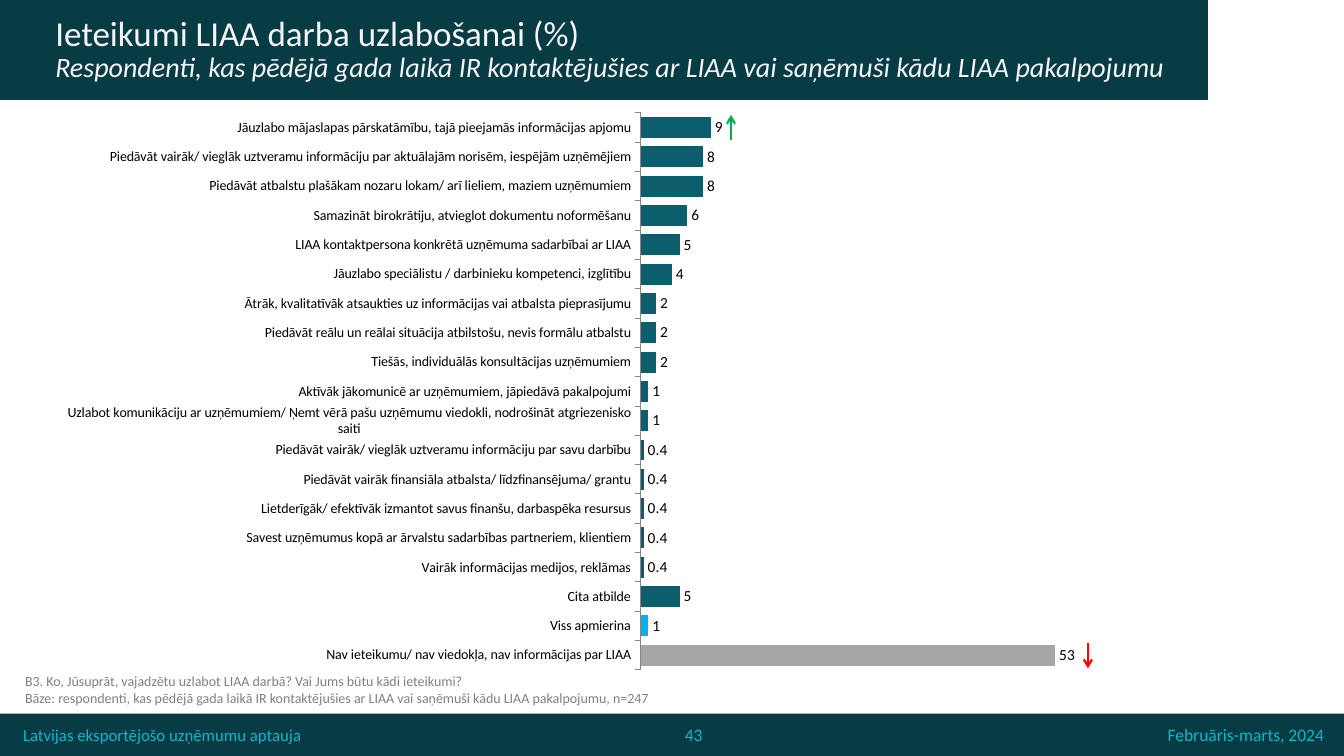
from lxml import etree
from pptx import Presentation
from pptx.chart.data import CategoryChartData
from pptx.dml.color import RGBColor
from pptx.enum.chart import XL_CHART_TYPE as ChartType
from pptx.enum.chart import XL_LABEL_POSITION as LabelPosition
from pptx.enum.chart import XL_TICK_LABEL_POSITION as TickLabelPosition
from pptx.enum.chart import XL_TICK_MARK as TickMark
from pptx.enum.shapes import MSO_CONNECTOR as Connector
from pptx.enum.shapes import MSO_SHAPE as Shape
from pptx.enum.text import MSO_ANCHOR as Anchor
from pptx.enum.text import PP_ALIGN as Align
from pptx.oxml import parse_xml
from pptx.oxml.ns import nsdecls, qn
from pptx.util import Inches, Pt

FONT = "Calibri"
DARK_TEAL = RGBColor(0x07, 0x3C, 0x45)
BAR_TEAL = RGBColor(0x0B, 0x5E, 0x6C)
FOOTER_CYAN = RGBColor(0x11, 0xB5, 0xCE)
TITLE_WHITE = RGBColor(0xF5, 0xF5, 0xF5)
NOTE_GRAY = RGBColor(0x80, 0x80, 0x80)
AXIS_GRAY = RGBColor(0x86, 0x86, 0x86)
SATISFIED_BLUE = RGBColor(0x00, 0xB0, 0xF0)
NO_ANSWER_GRAY = RGBColor(0xA6, 0xA6, 0xA6)
BLACK = RGBColor(0, 0, 0)
RISE_GREEN = RGBColor(0x00, 0xB0, 0x50)
FALL_RED = RGBColor(0xFF, 0, 0)

SUGGESTIONS = [
    ("Jāuzlabo mājaslapas pārskatāmību, tajā pieejamās informācijas apjomu", 9),
    ("Piedāvāt vairāk/ vieglāk uztveramu informāciju par aktuālajām norisēm, iespējām uzņēmējiem", 8),
    ("Piedāvāt atbalstu plašākam nozaru lokam/ arī lieliem, maziem uzņēmumiem", 8),
    ("Samazināt birokrātiju, atvieglot dokumentu noformēšanu", 6),
    ("LIAA kontaktpersona konkrētā uzņēmuma sadarbībai ar LIAA", 5),
    ("Jāuzlabo speciālistu / darbinieku kompetenci, izglītību", 4),
    ("Ātrāk, kvalitatīvāk atsaukties uz informācijas vai atbalsta pieprasījumu", 2),
    ("Piedāvāt reālu un reālai situācija atbilstošu, nevis formālu atbalstu", 2),
    ("Tiešās, individuālās konsultācijas uzņēmumiem", 2),
    ("Aktīvāk jākomunicē ar uzņēmumiem, jāpiedāvā pakalpojumi", 1),
    ("Uzlabot komunikāciju ar uzņēmumiem/ Ņemt vērā pašu uzņēmumu viedokli, "
     "nodrošināt atgriezenisko saiti", 1),
    ("Piedāvāt vairāk/ vieglāk uztveramu informāciju par savu darbību", 0.4),
    ("Piedāvāt vairāk finansiāla atbalsta/ līdzfinansējuma/ grantu", 0.4),
    ("Lietderīgāk/ efektīvāk izmantot savus finanšu, darbaspēka resursus", 0.4),
    ("Savest uzņēmumus kopā ar ārvalstu sadarbības partneriem, klientiem", 0.4),
    ("Vairāk informācijas medijos, reklāmas", 0.4),
    ("Cita atbilde", 5),
    ("Viss apmierina", 1),
    ("Nav ieteikumu/ nav viedokļa, nav informācijas par LIAA", 53),
]
POINT_COLORS = {17: SATISFIED_BLUE, 18: NO_ANSWER_GRAY}


def add_band(slide, left, top, width, height):
    band = slide.shapes.add_shape(
        Shape.RECTANGLE, Inches(left), Inches(top), Inches(width), Inches(height))
    band.shadow.inherit = False
    band.fill.solid()
    band.fill.fore_color.rgb = DARK_TEAL
    band.line.fill.background()


def add_text_frame(slide, left, top, width, height, anchor=Anchor.MIDDLE):
    box = slide.shapes.add_textbox(
        Inches(left), Inches(top), Inches(width), Inches(height))
    frame = box.text_frame
    frame.word_wrap = True
    frame.vertical_anchor = anchor
    return frame


def add_run(paragraph, text, size, color, italic=False):
    run = paragraph.add_run()
    run.text = text
    run.font.name = FONT
    run.font.size = Pt(size)
    run.font.italic = italic
    run.font.color.rgb = color


def add_footer_text(slide, left, width, text, size, align):
    paragraph = add_text_frame(slide, left, 7.08, width, 0.42).paragraphs[0]
    paragraph.alignment = align
    add_run(paragraph, text, size, FOOTER_CYAN)


def add_title(slide):
    paragraph = add_text_frame(slide, 0.45, 0, 11.53, 0.99).paragraphs[0]
    paragraph.line_spacing = 0.9
    add_run(paragraph, "Ieteikumi LIAA darba uzlabošanai (%)", 25, TITLE_WHITE)
    paragraph.add_line_break()
    add_run(paragraph, "Respondenti, kas pēdējā gada laikā IR kontaktējušies ar LIAA "
            "vai saņēmuši kādu LIAA pakalpojumu", 20, TITLE_WHITE, italic=True)


def add_notes(slide, lines):
    frame = add_text_frame(slide, 0.15, 6.46, 12.32, 0.6, Anchor.BOTTOM)
    for index, line in enumerate(lines):
        paragraph = frame.add_paragraph() if index else frame.paragraphs[0]
        add_run(paragraph, line, 10, NOTE_GRAY)


def set_plot_layout(chart, x, y, width, height):
    plot_area = chart.plots[0]._element.getparent()
    for layout in plot_area.findall(qn("c:layout")):
        plot_area.remove(layout)
    sizes = "".join(f'<c:{tag} val="{value}"/>' for tag, value in
                    (("x", x), ("y", y), ("w", width), ("h", height)))
    plot_area.insert(0, parse_xml(
        f'<c:layout {nsdecls("c")}><c:manualLayout><c:layoutTarget val="inner"/>'
        f'<c:xMode val="edge"/><c:yMode val="edge"/>{sizes}'
        '</c:manualLayout></c:layout>'))


def add_suggestion_chart(slide):
    data = CategoryChartData()
    data.categories = [label for label, _ in SUGGESTIONS]
    data.add_series("Series 1", [value for _, value in SUGGESTIONS])
    chart = slide.shapes.add_chart(
        ChartType.BAR_CLUSTERED, Inches(0.67), Inches(1), Inches(12), Inches(5.75), data).chart
    chart.has_legend = False
    chart.has_title = False
    chart.font.name = FONT
    chart.font.size = Pt(12)
    chart.font.color.rgb = BLACK
    set_plot_layout(chart, 0.472, 0.021, 0.519, 0.961)

    # Axes
    category_axis = chart.category_axis
    category_axis.reverse_order = True
    category_axis.major_tick_mark = TickMark.OUTSIDE
    category_axis.tick_label_position = TickLabelPosition.LOW
    category_axis.tick_labels.font.size = Pt(10)
    category_axis.format.line.color.rgb = AXIS_GRAY
    value_axis = chart.value_axis
    value_axis.minimum_scale = 0
    value_axis.maximum_scale = 80
    value_axis.has_major_gridlines = False
    value_axis.visible = False

    # Bars
    plot = chart.plots[0]
    plot.gap_width = 40
    plot.vary_by_categories = False
    series = plot.series[0]
    series.invert_if_negative = False
    series.format.fill.solid()
    series.format.fill.fore_color.rgb = BAR_TEAL
    for index, color in POINT_COLORS.items():
        fill = series.points[index].format.fill
        fill.solid()
        fill.fore_color.rgb = color

    # Value labels: one decimal below 1, whole numbers otherwise
    labels = series.data_labels
    labels.show_value = True
    labels.position = LabelPosition.OUTSIDE_END
    labels.number_format = "[<1]0.0;#,##0"
    labels.number_format_is_linked = False
    labels.font.size = Pt(11)
    labels.font.color.rgb = BLACK


def add_trend_arrow(slide, x, start, end, color):
    arrow = slide.shapes.add_connector(
        Connector.STRAIGHT, Inches(x), Inches(start), Inches(x), Inches(end))
    arrow.line.color.rgb = color
    arrow.line.width = Pt(1.5)
    etree.SubElement(arrow.line._get_or_add_ln(), qn("a:tailEnd"), type="arrow")
    etree.SubElement(arrow._element.spPr, qn("a:effectLst"))


def main():
    presentation = Presentation()
    presentation.slide_width = Inches(13.33)
    presentation.slide_height = Inches(7.5)
    slide = presentation.slides.add_slide(presentation.slide_layouts[6])

    # Footer
    add_band(slide, 0, 7.08, 13.33, 0.42)
    add_footer_text(slide, 5.54, 2.68, "43", 12.5, Align.CENTER)
    add_footer_text(slide, 0.13, 5.09, "Latvijas eksportējošo uzņēmumu aptauja", 12, Align.LEFT)
    add_footer_text(slide, 11.39, 1.84, "Februāris-marts, 2024", 12.5, Align.RIGHT)

    # Header
    add_band(slide, 0, 0, 11.98, 0.99)
    add_title(slide)

    # Chart with trend arrows
    add_suggestion_chart(slide)
    add_trend_arrow(slide, 10.79, 6.38, 6.63, FALL_RED)
    add_trend_arrow(slide, 7.25, 1.39, 1.14, RISE_GREEN)

    # Question and base
    add_notes(slide, [
        "B3. Ko, Jūsuprāt, vajadzētu uzlabot LIAA darbā? Vai Jums būtu kādi ieteikumi?",
        "Bāze: respondenti, kas pēdējā gada laikā IR kontaktējušies ar LIAA "
        "vai saņēmuši kādu LIAA pakalpojumu, n=247",
    ])
    presentation.save("out.pptx")


if __name__ == "__main__":
    main()
